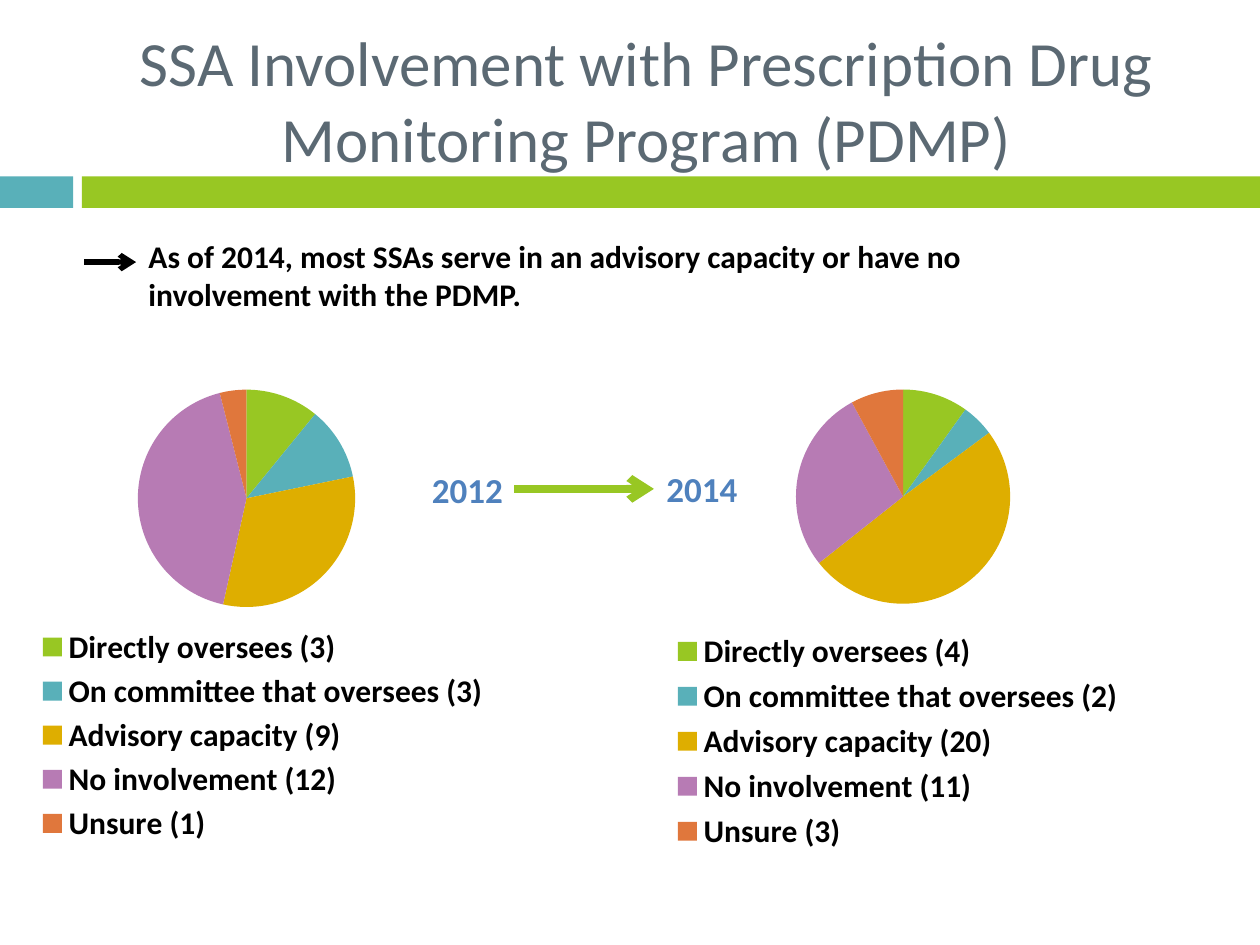
from lxml.etree import SubElement
from pptx import Presentation
from pptx.chart.data import CategoryChartData
from pptx.dml.color import RGBColor
from pptx.enum.chart import XL_CHART_TYPE as ChartType, XL_LEGEND_POSITION as LegendPosition
from pptx.enum.shapes import MSO_CONNECTOR as Connector, MSO_SHAPE as Shape
from pptx.enum.text import MSO_ANCHOR as Anchor, PP_ALIGN as Align
from pptx.oxml.ns import qn
from pptx.util import Inches, Pt

FONT = "Calibri"
GREEN, TEAL, SLATE, BLUE, BLACK = "98C723", "59B0B9", "5B6973", "4F81BD", "000000"
SLICE_COLORS = [GREEN, TEAL, "DEAE00", "B77BB4", "E0773C"]
ROLES = ["Directly oversees", "On committee that oversees", "Advisory capacity",
         "No involvement", "Unsure"]


def set_fill(fill, color):
    fill.solid()
    fill.fore_color.rgb = RGBColor.from_string(color)


def format_font(font, size, color, bold=False):
    font.name = FONT
    font.size = Pt(size)
    font.bold = bold
    font.color.rgb = RGBColor.from_string(color)


def place(shape, box):
    shape.left, shape.top, shape.width, shape.height = map(Inches, box)


def add_title(slide, text):
    title = slide.shapes.title
    place(title, (0.67, 0.25, 8.92, 1.08))
    frame = title.text_frame
    frame.text = text
    frame.vertical_anchor = Anchor.MIDDLE
    paragraph = frame.paragraphs[0]
    paragraph.alignment = Align.CENTER
    format_font(paragraph.runs[0].font, 36, SLATE)


def add_bar(slide, left, width, color):
    bar = slide.shapes.add_shape(Shape.RECTANGLE, *map(Inches, (left, 1.4, width, 0.25)))
    bar.shadow.inherit = False
    set_fill(bar.fill, color)
    bar.line.fill.background()


def add_text(slide, text, box, size, color):
    text_box = slide.shapes.add_textbox(*map(Inches, box))
    frame = text_box.text_frame
    frame.word_wrap = True
    frame.text = text
    format_font(frame.paragraphs[0].runs[0].font, size, color, bold=True)
    return text_box


def add_arrow(slide, start, end, color, width):
    arrow = slide.shapes.add_connector(Connector.STRAIGHT, *map(Inches, start + end))
    arrow.line.color.rgb = RGBColor.from_string(color)
    arrow.line.width = Pt(width)
    SubElement(arrow.line._get_or_add_ln(), qn("a:tailEnd"), type="arrow")
    SubElement(arrow._element.spPr, qn("a:effectLst"))
    return arrow


def set_layout(parent, index, area, inner=False):
    """Place a plot area or legend at fractions (x, y, w, h) of the chart."""
    for old in parent.findall(qn("c:layout")):
        parent.remove(old)
    layout = SubElement(parent, qn("c:layout"))
    parent.insert(index, layout)
    manual = SubElement(layout, qn("c:manualLayout"))
    if inner:
        SubElement(manual, qn("c:layoutTarget"), val="inner")
    for mode in ("xMode", "yMode"):
        SubElement(manual, qn(f"c:{mode}"), val="edge")
    for name, value in zip("xywh", area):
        SubElement(manual, qn(f"c:{name}"), val=str(value))


def add_pie(slide, box, counts, percentages, plot_area, legend_area):
    data = CategoryChartData()
    data.categories = [f"{role} ({count})" for role, count in zip(ROLES, counts)]
    data.add_series("Series 1", percentages)
    chart = slide.shapes.add_chart(ChartType.PIE, *map(Inches, box), data).chart
    chart.has_title = False
    format_font(chart.font, 18, BLACK)
    plot = chart.plots[0]
    plot.vary_by_categories = True
    for index, color in enumerate(SLICE_COLORS):
        set_fill(plot.series[0].points[index].format.fill, color)

    chart.has_legend = True
    legend = chart.legend
    legend.position = LegendPosition.BOTTOM
    legend.include_in_layout = False
    format_font(legend.font, 18, BLACK, bold=True)
    set_layout(legend._element, 1, legend_area)
    set_layout(chart._chartSpace.chart.plotArea, 0, plot_area, inner=True)


def main():
    presentation = Presentation()
    presentation.slide_width, presentation.slide_height = Inches(10), Inches(7.5)
    slide = presentation.slides.add_slide(presentation.slide_layouts[5])

    add_bar(slide, 0, 0.58, TEAL)
    add_bar(slide, 0.65, 9.35, GREEN)
    add_title(slide, "SSA Involvement with Prescription Drug Monitoring Program (PDMP)")

    add_pie(slide, (0.25, 2.92, 3.67, 5.45), (3, 3, 9, 12, 1), (11, 11, 32, 43, 4),
            (0.23, 0.03, 0.47, 0.32), (0.01, 0.37, 0.98, 0.33))
    add_pie(slide, (4.83, 2.92, 4.25, 5.11), (4, 2, 20, 11, 3), (10, 5, 50, 28, 8),
            (0.35, 0.03, 0.4, 0.34), (0.11, 0.4, 0.86, 0.36))

    add_text(slide, "2012", (3.33, 3.67, 0.92, 0.44), 20, BLUE)
    later_year = add_text(slide, "2014", (5.19, 3.66, 0.92, 0.44), 20, BLUE)
    year_arrow = add_arrow(slide, (4.08, 3.88), (5.19, 3.88), GREEN, 4.5)
    year_arrow.end_connect(later_year, 1)

    add_text(slide, "As of 2014, most SSAs serve in an advisory capacity or have no "
             "involvement with the PDMP.", (1.08, 1.83, 7.75, 0.71), 18, BLACK)
    add_arrow(slide, (0.67, 2.08), (1.08, 2.08), BLACK, 3)

    presentation.save("out.pptx")


if __name__ == "__main__":
    main()
